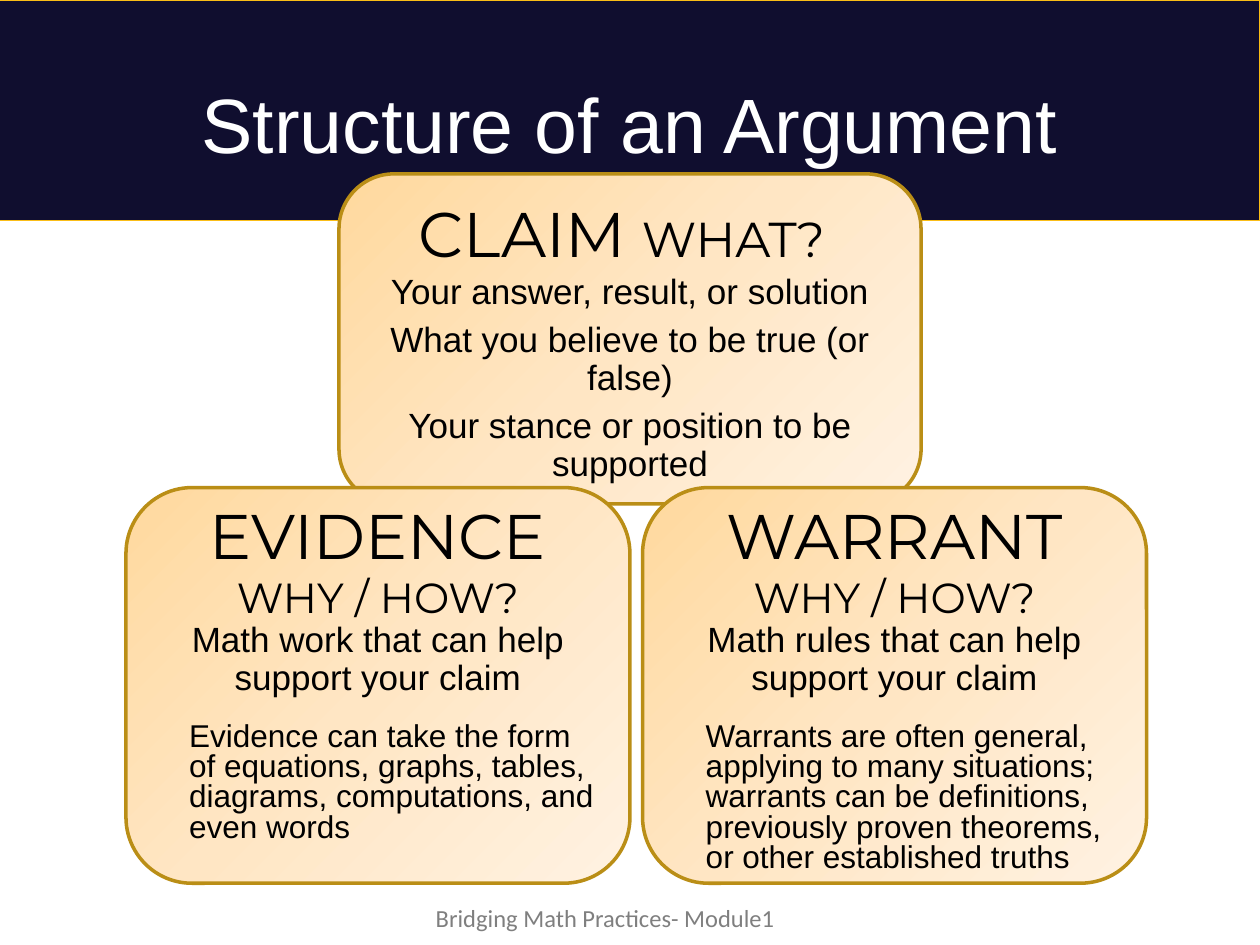
from dataclasses import dataclass

from pptx import Presentation
from pptx.dml.color import RGBColor
from pptx.enum.shapes import MSO_SHAPE
from pptx.enum.text import MSO_ANCHOR, PP_ALIGN
from pptx.oxml import parse_xml
from pptx.oxml.ns import nsdecls
from pptx.util import Inches, Pt

RECT, ROUND = MSO_SHAPE.RECTANGLE, MSO_SHAPE.ROUNDED_RECTANGLE
MIDDLE, TOP = MSO_ANCHOR.MIDDLE, MSO_ANCHOR.TOP
LEFT, CENTER = PP_ALIGN.LEFT, PP_ALIGN.CENTER


@dataclass(frozen=True)
class Theme:
    # Colours
    navy: str = "100E2F"
    gold: str = "FABD17"
    edge: str = "BA8E16"
    white: str = "FFFFFF"
    black: str = "000000"
    gray: str = "7F7F7F"
    glow: tuple = ((0, "FFD99E"), (50, "FFE6C4"), (100, "FFF2E2"))
    # Fonts
    body: str = "Arial"
    head: str = "Montserrat"
    foot: str = "Calibri"
    # Type sizes
    title: int = 44
    big: int = 36
    ask: int = 28
    sub: int = 24
    text: int = 20
    note: int = 18
    small: int = 14


def write(frame, runs, *, first=False, font, color, size=None, align=CENTER,
          lines=None, before=0, indent=0):
    """Add a paragraph; runs is a string or a list of (text, size) pairs."""
    para = frame.paragraphs[0] if first else frame.add_paragraph()
    para.alignment = align
    para.space_before = Pt(before)
    if lines:
        para.line_spacing = lines
    if indent:
        props = para._p.get_or_add_pPr()
        props.set("marL", str(Inches(indent)))
        props.set("indent", "0")
    for words, points in [(runs, size)] if isinstance(runs, str) else runs:
        run = para.add_run()
        run.text = words
        run.font.name = font
        run.font.size = Pt(points)
        run.font.color.rgb = RGBColor.from_string(color)


class Deck:
    def __init__(self, slide, theme):
        self.slide, self.theme = slide, theme

    def shape(self, kind, box, line, width):
        item = self.slide.shapes.add_shape(kind, *map(Inches, box))
        item.shadow.inherit = False
        item.line.color.rgb = RGBColor.from_string(line)
        item.line.width = Pt(width)
        return item

    def band(self, box):
        item = self.shape(RECT, box, self.theme.gold, 0.75)
        item.fill.solid()
        item.fill.fore_color.rgb = RGBColor.from_string(self.theme.navy)

    def label(self, box, words, anchor=TOP, **style):
        frame = self.slide.shapes.add_textbox(*map(Inches, box)).text_frame
        frame.word_wrap = True
        frame.vertical_anchor = anchor
        write(frame, words, first=True, **style)

    def card(self, box, heads, points, notes=(), floor=0.05):
        """Rounded box with heading lines, main points and left-set notes."""
        look = self.theme
        item = self.shape(ROUND, box, look.edge, 2)
        # Glow that spreads from the top left corner
        stops = "".join(
            f'<a:gs pos="{spot * 1000}"><a:srgbClr val="{tint}"/></a:gs>'
            for spot, tint in look.glow)
        item._element.spPr.insert(2, parse_xml(
            f'<a:gradFill {nsdecls("a")} rotWithShape="1">'
            f'<a:gsLst>{stops}</a:gsLst><a:path path="circle">'
            '<a:fillToRect r="100000" b="100000"/></a:path></a:gradFill>'))
        # Text
        frame = item.text_frame
        frame.word_wrap = True
        frame.vertical_anchor = MIDDLE
        frame.margin_bottom = Inches(floor)
        for i, runs in enumerate(heads):
            write(frame, runs, first=i == 0, font=look.head, color=look.black)
        for i, words in enumerate(points):
            plain = i == 0 and not notes
            write(frame, words, font=look.body, color=look.black,
                  size=look.text, lines=None if plain else 0.9,
                  before=6 if i else 0)
        for i, words in enumerate(notes):
            write(frame, words, font=look.body, color=look.black,
                  size=look.note, align=LEFT, lines=0.8, indent=0.25,
                  before=0 if i else 14.5)


def main():
    theme = Theme()
    show = Presentation()
    show.slide_width, show.slide_height = Inches(10), Inches(7.5)
    deck = Deck(show.slides.add_slide(show.slide_layouts[6]), theme)

    # Title band and footer
    deck.band((-0.04, 0, 10.04, 1.75))
    deck.label((3.36, 7.12, 2.95, 0.34), "Bridging Math Practices- Module1",
               font=theme.foot, color=theme.gray, size=theme.small, align=LEFT)
    deck.label((1.25, 0.43, 7.5, 1.08), "Structure of an Argument", MIDDLE,
               font=theme.body, color=theme.white, size=theme.title)

    # Claim
    deck.card((2.69, 1.38, 4.62, 2.62),
              [[("CLAIM ", theme.big), ("WHAT?", theme.ask), (" ", theme.big)]],
              ["Your answer, result, or solution",
               "What you believe to be true (or false)",
               "Your stance or position to be supported"])

    # Evidence and warrant
    pair = (
        ("EVIDENCE", "work", 0.29,
         ["Evidence can take the form of equations, graphs, tables, "
          "diagrams, computations, and even words"]),
        ("WARRANT", "rules", 0.05,
         ["Warrants are often general, applying to many situations;",
          "warrants can be definitions, previously proven theorems, "
          "or other established truths"]),
    )
    for i, (name, means, floor, notes) in enumerate(pair):
        deck.card((1 + 4.1 * i, 3.87, 4, 3.14),
                  [[(name, theme.big)], [("WHY / HOW?", theme.sub)]],
                  [f"Math {means} that can help support your claim"],
                  notes, floor)

    show.save("out.pptx")


if __name__ == "__main__":
    main()
